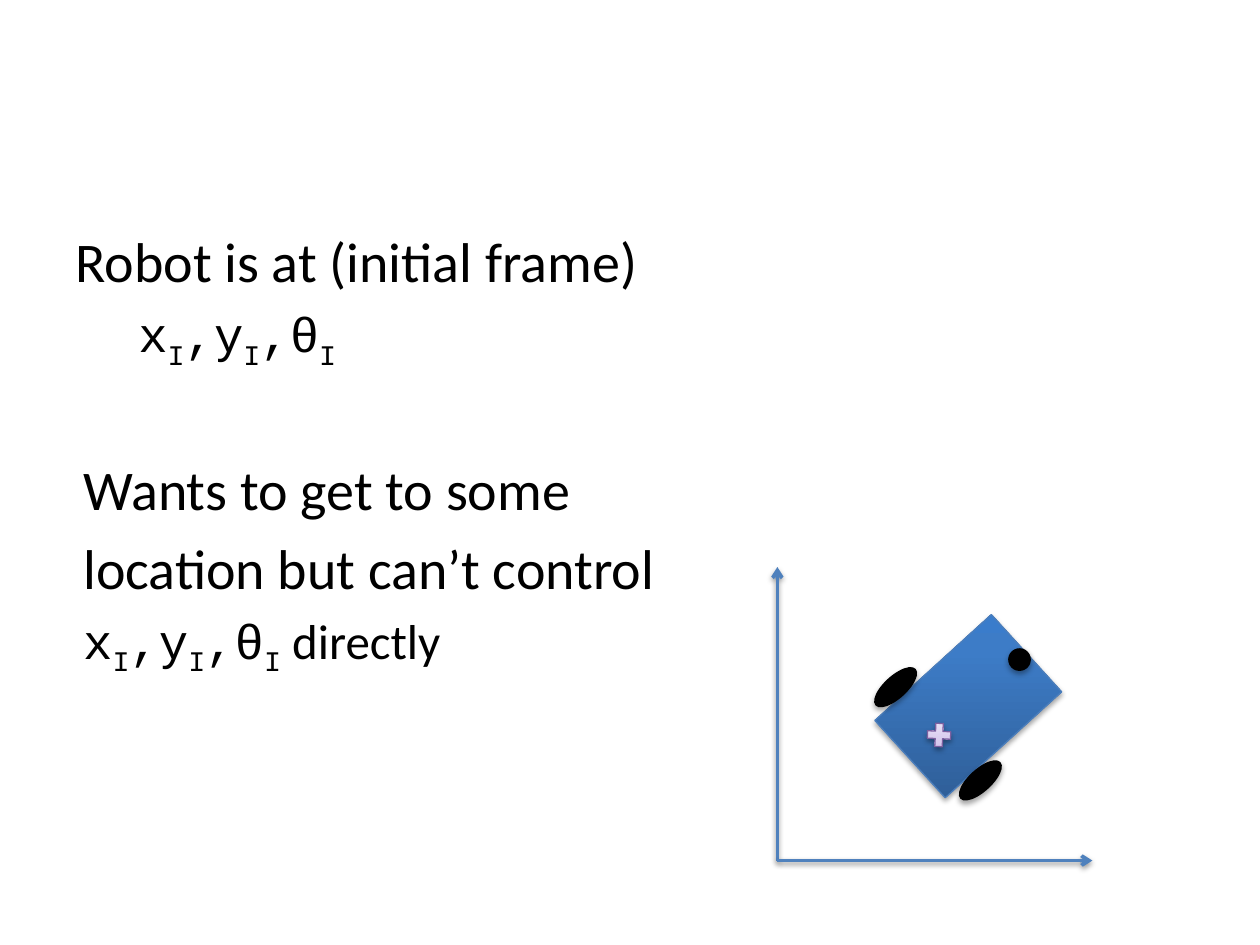
import math

from lxml import etree
from pptx import Presentation, util as u
from pptx.dml.color import RGBColor
from pptx.enum import shapes, text
from pptx.oxml import parse_xml
from pptx.oxml.ns import qn

BLACK = RGBColor(0x00, 0x00, 0x00)
BODY_LINE = RGBColor(0x4B, 0x7E, 0xBC)
CROSS_LINE = RGBColor(0x7D, 0x60, 0xA0)
AXIS_BLUE = RGBColor(0x4F, 0x81, 0xBD)
BODY_STOPS = [(0, RGBColor(0x2F, 0x5F, 0x99)), (80, RGBColor(0x3D, 0x7C, 0xC7)),
              (100, RGBColor(0x3A, 0x7C, 0xCB))]
CROSS_STOPS = [(0, RGBColor(0xC9, 0xB5, 0xE8)), (35, RGBColor(0xD8, 0xCB, 0xEE)),
               (100, RGBColor(0xF0, 0xEA, 0xF9))]

SANS, MONO = "Calibri", "Courier New"
COLS, ROWS = 40, 30
NS = 'xmlns:a="http://schemas.openxmlformats.org/drawingml/2006/main"'
POSE = [("x", 0), ("I", -25), (",y", 0), ("I", -25), (",θ", 0), ("I", -25)]


def add_run(p, words, font=SANS, size=32, color=BLACK, baseline=0):
    r = p.add_run()
    r.text = words
    r.font.name, r.font.size = font, u.Pt(size)
    r.font.color.rgb = color
    if baseline:
        r.font._element.set("baseline", str(baseline * 1000))


class Sketch:
    """Style and current slide; lengths are in columns and rows of the grid."""

    def __init__(self, prs):
        self.s = prs.slides.add_slide(prs.slide_layouts[6])
        self.col = prs.slide_width / COLS
        self.row = prs.slide_height / ROWS

    def box(self, x, y, w, h):
        return [round(v) for v in (x * self.col, y * self.row, w * self.col, h * self.row)]

    def text_box(self, x, y, w, h):
        tf = self.s.shapes.add_textbox(*self.box(x, y, w, h)).text_frame
        tf.word_wrap = True
        tf.auto_size = text.MSO_AUTO_SIZE.NONE
        return tf

    def paragraph(self, tf, indent=0, before=6.4):
        p = tf.paragraphs[0] if not tf.paragraphs[0].runs else tf.add_paragraph()
        p.space_before = u.Pt(before)
        pPr = p._p.get_or_add_pPr()
        pPr.set("marL", str(round(indent * self.col)))
        pPr.set("indent", "0")
        return p

    def pose(self, p):
        for words, baseline in POSE:
            add_run(p, words, font=MONO, size=28, baseline=baseline)

    def shadow(self, sp, alpha=35, dist=1.8):
        spPr = sp._element.spPr
        for old in spPr.findall(qn("a:effectLst")):
            spPr.remove(old)
        spPr.append(parse_xml(
            f'<a:effectLst {NS}><a:outerShdw blurRad="{u.Pt(3.1)}" dist="{u.Pt(dist)}" '
            f'dir="5400000" rotWithShape="0"><a:srgbClr val="{BLACK}">'
            f'<a:alpha val="{alpha * 1000}"/></a:srgbClr></a:outerShdw></a:effectLst>'))

    def gradient(self, sp, stops):
        """Fill from bottom to top, upright whatever the shape's rotation."""
        sp.fill.gradient()
        sp.fill.gradient_angle = 90
        grad = sp._element.spPr.find(qn("a:gradFill"))
        grad.set("rotWithShape", "0")
        gs_lst = grad.find(qn("a:gsLst"))
        for gs in list(gs_lst):
            gs_lst.remove(gs)
        for pos, color in stops:
            gs = etree.SubElement(gs_lst, qn("a:gs"), pos=str(pos * 1000))
            etree.SubElement(gs, qn("a:srgbClr"), val=str(color))

    def piece(self, kind, cx, cy, w, h, rotation, fill=BLACK, line=BLACK):
        """Place a rotated shape by its centre."""
        sp = self.s.shapes.add_shape(kind, *self.box(cx - w / 2, cy - h / 2, w, h))
        sp.rotation = rotation
        if isinstance(fill, list):
            self.gradient(sp, fill)
        else:
            sp.fill.solid()
            sp.fill.fore_color.rgb = fill
        sp.line.color.rgb, sp.line.width = line, u.Pt(0.75)
        self.shadow(sp)

    def robot(self, cx, cy, heading):
        """Lay pieces out along the robot's own forward and sideways axes."""
        kinds = shapes.MSO_SHAPE
        axle, wheel = -1.3, (1.68, 0.68)
        c, s = math.cos(math.radians(heading)), math.sin(math.radians(heading))
        for kind, ahead, side, (w, h), style in (
            (kinds.RECTANGLE, 0, 0, (5, 3.32), dict(fill=BODY_STOPS, line=BODY_LINE)),
            (kinds.OVAL, 2.2, 0, (0.68, 0.68), {}),
            (kinds.OVAL, axle, -2, wheel, {}),
            (kinds.OVAL, axle, 2, wheel, {}),
            (kinds.MATH_MULTIPLY, axle, 0.05, (1, 1), dict(fill=CROSS_STOPS, line=CROSS_LINE)),
        ):
            self.piece(kind, cx + ahead * c + side * s, cy - ahead * s + side * c,
                       w, h, 360 - heading, **style)

    def arrow(self, x1, y1, x2, y2):
        ends = self.box(x1, y1, x2, y2)
        ln = self.s.shapes.add_connector(shapes.MSO_CONNECTOR.STRAIGHT, *ends)
        ln.line.color.rgb, ln.line.width = AXIS_BLUE, u.Pt(2)
        etree.SubElement(ln.line._get_or_add_ln(), qn("a:tailEnd"), type="arrow")
        self.shadow(ln, alpha=38, dist=1.6)


def main():
    prs = Presentation()
    prs.slide_width, prs.slide_height = u.Inches(10), u.Inches(7.5)
    sk = Sketch(prs)

    tf = sk.text_box(2, 7, 36, 19.8)
    add_run(sk.paragraph(tf, before=2), "Robot is at (initial frame)")
    sk.pose(sk.paragraph(tf, indent=2, before=5.6))
    add_run(sk.paragraph(tf, indent=0.25, before=48), "Wants to get to some")
    add_run(sk.paragraph(tf, indent=0.25), "location but can’t control")
    p = sk.paragraph(tf, indent=0.25, before=5.6)
    sk.pose(p)
    add_run(p, " directly", size=28)

    sk.robot(30.74, 22.42, heading=42.3)
    origin = (24.68, 27.32)
    sk.arrow(*origin, origin[0], 18)
    sk.arrow(*origin, origin[0] + 10, origin[1])

    prs.save("out.pptx")


if __name__ == "__main__":
    main()
